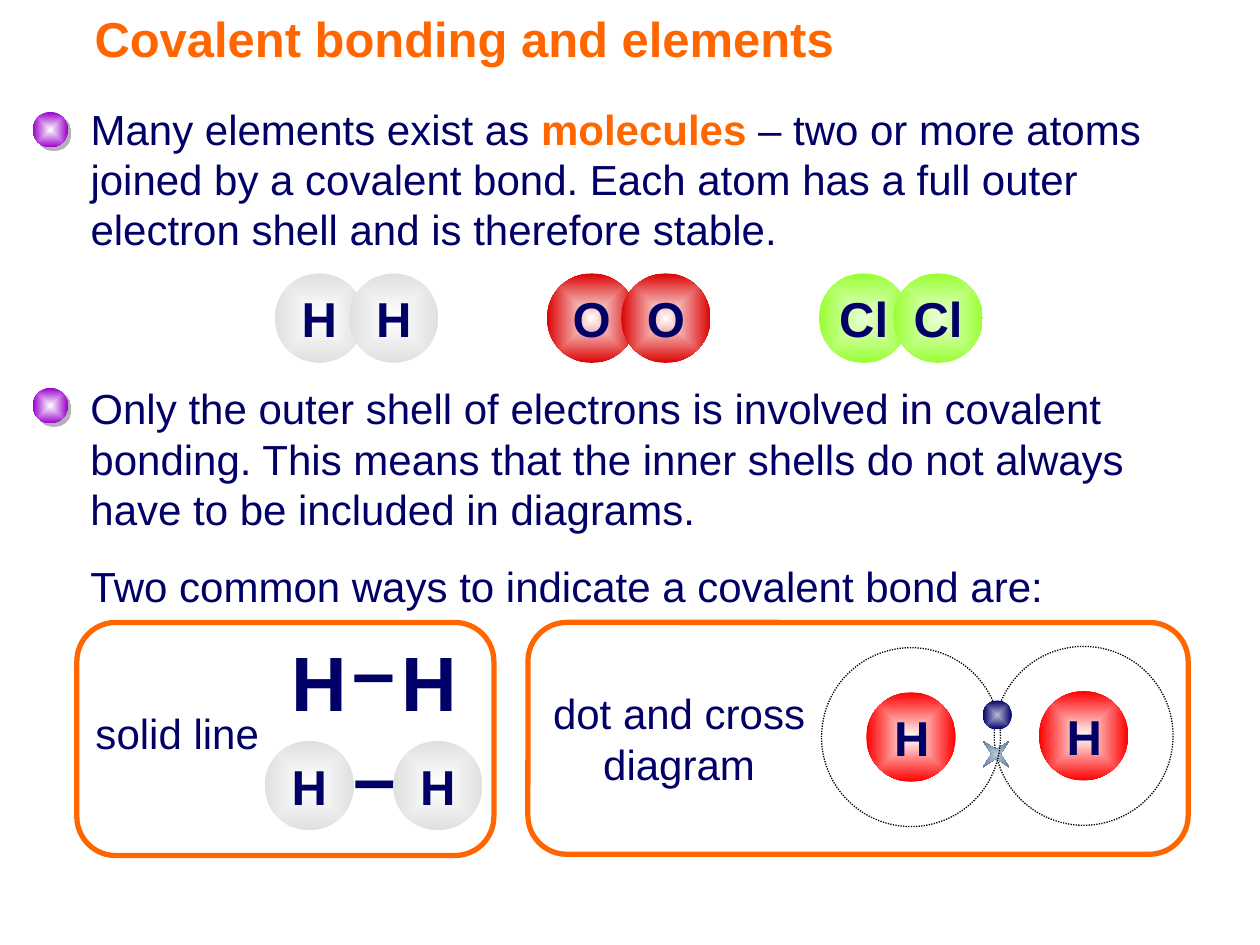
import pptx
import pptx.util
import pptx.dml.color
import pptx.enum.dml
import pptx.enum.shapes
import pptx.enum.text
import pptx.oxml
import pptx.oxml.ns
from dataclasses import dataclass

Inches, Pt = pptx.util.Inches, pptx.util.Pt
SHAPE = pptx.enum.shapes.MSO_SHAPE
ALIGN = pptx.enum.text.PP_ALIGN
MIDDLE = pptx.enum.text.MSO_ANCHOR.MIDDLE
qn = pptx.oxml.ns.qn


@dataclass(frozen=True)
class Theme:
    font: str = "Arial"
    ink: str = "010066"
    accent: str = "FF6600"
    shell: str = "000000"
    shadow: str = "B2B2B2"
    bead: tuple = ("FFFFFF", "9900CC")
    hydrogen: tuple = ("FFFFFF", "E0E0E0")
    oxygen: tuple = ("FFFFFF", "DB0303")
    chlorine: tuple = ("EBFFD8", "99FF33")
    nucleus: tuple = ("FFFFFF", "FF0000")
    dot: tuple = ("B9B9D5", "010066")
    cross: tuple = ("BECBD8", "013366")
    body: int = 24
    heading: int = 28
    formula: int = 44


THEME = Theme()
ATOM = 0.71
SHELL = 1.42


def rgb(code):
    return pptx.dml.color.RGBColor.from_string(code)


def style(run, size=THEME.body, color=THEME.ink, bold=False):
    run.font.name = THEME.font
    run.font.size = Pt(size)
    run.font.color.rgb = rgb(color)
    run.font.bold = bold


def add_text(slide, box, text, size=THEME.body, bold=False, align=ALIGN.LEFT, spacing=None):
    frame = slide.shapes.add_textbox(*map(Inches, box)).text_frame
    frame.word_wrap = True
    frame.text = text
    paragraph = frame.paragraphs[0]
    paragraph.alignment = align
    if spacing:
        paragraph.line_spacing = spacing
    style(paragraph.runs[0], size, bold=bold)
    return paragraph


def add_figure(slide, kind, box):
    """Add a preset shape without fill, line or shadow."""
    figure = slide.shapes.add_shape(kind, *map(Inches, box))
    figure.shadow.inherit = False
    figure.fill.background()
    figure.line.fill.background()
    return figure


def add_glowing(slide, box, colors, kind=SHAPE.OVAL):
    """Add a shape shaded from its centre colour to its rim colour."""
    figure = add_figure(slide, kind, box)
    figure.fill.gradient()
    for stop, color in zip(figure.fill.gradient_stops, colors):
        stop.color.rgb = rgb(color)
    gradient = figure._element.spPr.find(qn("a:gradFill"))
    gradient.replace(gradient.find(qn("a:lin")), pptx.oxml.parse_xml(
        f'<a:path {pptx.oxml.ns.nsdecls("a")} path="shape">'
        '<a:fillToRect l="50000" t="50000" r="50000" b="50000"/></a:path>'))
    return figure


def add_atom(slide, left, top, symbol, colors):
    atom = add_glowing(slide, (left, top, ATOM, ATOM), colors)
    frame = atom.text_frame
    frame.word_wrap = False
    frame.vertical_anchor = MIDDLE
    frame.text = symbol
    frame.paragraphs[0].alignment = ALIGN.CENTER
    style(frame.paragraphs[0].runs[0], THEME.heading, bold=True)


def add_atom_pair(slide, left, top, symbol, colors, step):
    for offset in (0, step):
        add_atom(slide, left + offset, top, symbol, colors)


def add_title(slide, box, text):
    title = slide.shapes.title
    title.left, title.top, title.width, title.height = map(Inches, box)
    frame = title.text_frame
    frame.margin_left = Inches(0.75)
    frame.vertical_anchor = MIDDLE
    frame.text = text
    frame.paragraphs[0].alignment = ALIGN.LEFT
    style(frame.paragraphs[0].runs[0], THEME.heading, THEME.accent, True)


def add_point(slide, box, text, bead_drop):
    left, top, _, _ = box
    bead = add_glowing(slide, (left - 0.36, top + bead_drop, 0.28, 0.28), THEME.bead)
    bead._element.spPr.find(qn("a:effectLst")).append(pptx.oxml.parse_xml(
        f'<a:outerShdw {pptx.oxml.ns.nsdecls("a")} dist="{Pt(2.8)}" dir="2700000" '
        f'algn="ctr" rotWithShape="0"><a:srgbClr val="{THEME.shadow}"/></a:outerShdw>'))
    return add_text(slide, box, text)


def add_molecules(slide, box):
    left, top, width, _ = box
    molecules = (("H", THEME.hydrogen), ("O", THEME.oxygen), ("Cl", THEME.chlorine))
    overlap_step = 0.59
    pitch = (width - ATOM - overlap_step) / (len(molecules) - 1)
    for index, (symbol, colors) in enumerate(molecules):
        add_atom_pair(slide, left + index * pitch, top, symbol, colors, overlap_step)


def add_panel(slide, box):
    panel = add_figure(slide, SHAPE.ROUNDED_RECTANGLE, box)
    panel.adjustments[0] = 0.167
    panel.line.color.rgb = rgb(THEME.accent)
    panel.line.width = Pt(3)


def add_solid_line_panel(slide, box):
    left, top, _, _ = box
    add_panel(slide, box)
    add_text(slide, (left + 0.05, top + 0.63, 1.64, 0.5), "solid line")
    for offset in (1.49, 2.36):
        add_text(slide, (left + offset, top + 0.05, 0.87, 0.83), "H",
                 THEME.formula, True, ALIGN.CENTER)
    for across, down in ((2.04, 0.15), (2.05, 0.99)):
        add_text(slide, (left + across, top + down, 0.63, 0.61), "–",
                 THEME.formula, True, ALIGN.CENTER, 0.7)
    add_atom_pair(slide, left + 1.49, top + 0.94, "H", THEME.hydrogen, 1.02)


def add_shelled_atom(slide, left, top, label_drop):
    """Add a nucleus with its symbol inside a dotted electron shell."""
    inset = (SHELL - ATOM) / 2
    add_glowing(slide, (left + inset, top + inset, ATOM, ATOM), THEME.nucleus)
    add_text(slide, (left + 0.42, top + label_drop, 0.59, 0.57), "H",
             THEME.heading, True, ALIGN.CENTER)
    shell = add_figure(slide, SHAPE.OVAL, (left, top, SHELL, SHELL))
    shell.line.color.rgb = rgb(THEME.shell)
    shell.line.width = Pt(0.75)
    shell.line.dash_style = pptx.enum.dml.MSO_LINE.ROUND_DOT


def add_dot_and_cross_panel(slide, box):
    left, top, _, _ = box
    add_panel(slide, box)
    add_text(slide, (left + 0.07, top + 0.47, 2.26, 0.9), "dot and cross diagram",
             align=ALIGN.CENTER)
    add_shelled_atom(slide, left + 3.7, top + 0.19, 0.43)
    cross = add_glowing(slide, (left + 3.57, top + 0.9, 0.29, 0.29),
                        THEME.cross, SHAPE.STAR_4_POINT)
    cross.adjustments[0] = 0.125
    cross.rotation = 45
    add_shelled_atom(slide, left + 2.33, top + 0.2, 0.43)
    add_glowing(slide, (left + 3.61, top + 0.62, 0.23, 0.23), THEME.dot)


def main():
    deck = pptx.Presentation()
    deck.slide_width, deck.slide_height = Inches(10), Inches(7.5)
    slide = deck.slides.add_slide(deck.slide_layouts.get_by_name("Title Only"))

    add_title(slide, (0, 0, 8.54, 0.6), "Covalent bonding and elements")
    elements = add_point(slide, (0.62, 0.77, 9.02, 1.3), "Many elements exist as ", 0.12)
    for text, color, bold in (
            ("molecules", THEME.accent, True),
            (" – two or more atoms joined by a covalent bond. Each atom has a full "
             "outer electron shell and is therefore stable.", THEME.ink, False)):
        run = elements.add_run()
        run.text = text
        style(run, color=color, bold=bold)
    add_molecules(slide, (2.18, 2.17, 5.62, ATOM))
    add_point(slide, (0.62, 2.99, 8.97, 1.3),
              "Only the outer shell of electrons is involved in covalent bonding. This means "
              "that the inner shells do not always have to be included in diagrams.", 0.09)
    add_text(slide, (0.62, 4.4, 9.1, 0.5), "Two common ways to indicate a covalent bond are:")
    add_solid_line_panel(slide, (0.61, 4.94, 3.31, 1.85))
    add_dot_and_cross_panel(slide, (4.19, 4.94, 5.24, 1.84))
    deck.save("out.pptx")


if __name__ == "__main__":
    main()
